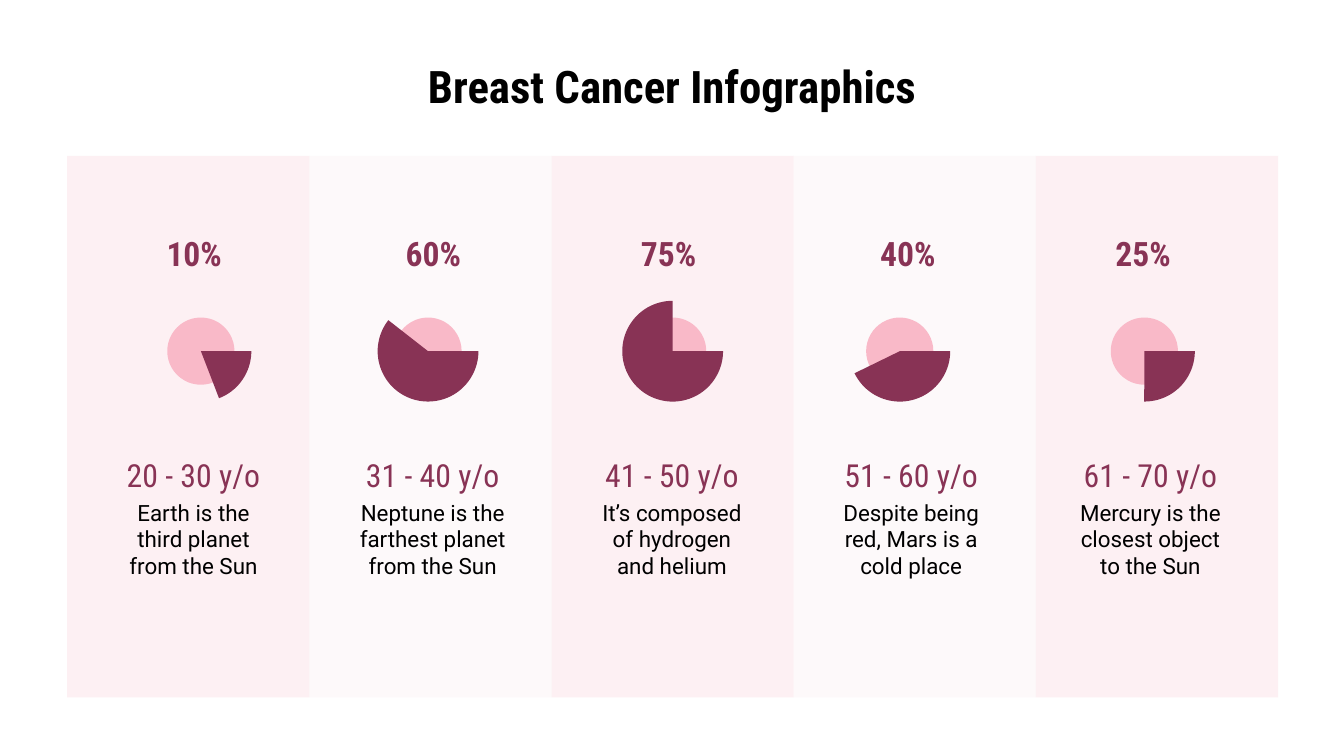
from lxml.etree import SubElement
from pptx import Presentation
from pptx.dml.color import RGBColor
from pptx.enum.shapes import MSO_SHAPE
from pptx.enum.text import MSO_ANCHOR, PP_ALIGN
from pptx.oxml.ns import qn
from pptx.util import Inches, Pt

GRID_COLUMNS, GRID_ROWS = 100, 56.25
CELL = Inches(10) / GRID_COLUMNS
PANEL_PITCH = 18.02
CAPTION_PITCH = 17.8
PINK, PALE, PLUM, BLACK = "F9B9C8", "F9EAEE", "883355", "000000"

AGE_GROUPS = [
    ("10%", 14.45, 14.95, 69, "20 - 30 y/o", "Earth is the third planet from the Sun"),
    ("60%", 32.25, 31.85, 218, "31 - 40 y/o", "Neptune is the farthest planet from the Sun"),
    ("75%", 49.75, 50.05, 270, "41 - 50 y/o", "It’s composed of hydrogen and helium"),
    ("40%", 67.55, 66.95, 154, "51 - 60 y/o", "Despite being red, Mars is a cold place"),
    ("25%", 85.05, 85.15, 90.29, "61 - 70 y/o", "Mercury is the closest object to the Sun"),
]


def cells(*counts):
    return [round(count * CELL) for count in counts]


def color(value):
    return RGBColor.from_string(value)


def add_figure(page, kind, left, top, width, height, fill, opacity=100):
    shape = page.shapes.add_shape(kind, *cells(left, top, width, height))
    shape.shadow.inherit = False
    shape.line.fill.background()
    shape.fill.solid()
    shape.fill.fore_color.rgb = color(fill)
    if opacity < 100:
        tint = shape.fill._xPr.find(".//" + qn("a:srgbClr"))
        SubElement(tint, qn("a:alpha"), val=str(opacity * 1000))
    return shape


def add_label(page, text, center, top, width, height, size, ink,
              font="Roboto Condensed", bold=False, anchor=MSO_ANCHOR.MIDDLE):
    box = page.shapes.add_textbox(*cells(center - width / 2, top, width, height))
    frame = box.text_frame
    frame.word_wrap = True
    frame.vertical_anchor = anchor
    frame.margin_left = frame.margin_right = Inches(0.1)
    frame.margin_top = frame.margin_bottom = Inches(0.1)
    para = frame.paragraphs[0]
    para.text = text
    para.alignment = PP_ALIGN.CENTER
    para.font.name = font
    para.font.size = Pt(size)
    para.font.bold = bold
    para.font.color.rgb = color(ink)


def add_panel(page, index):
    fill, opacity = (PALE, 28) if index % 2 else (PINK, 21)
    add_figure(page, MSO_SHAPE.RECTANGLE, 5 + index * PANEL_PITCH, 11.6,
               PANEL_PITCH, 40.3, fill, opacity)


def add_dial(page, center, angle):
    middle, disc, wedge = 26.13, 5, 7.5
    add_figure(page, MSO_SHAPE.OVAL, center - disc / 2, middle - disc / 2,
               disc, disc, PINK)
    pie = add_figure(page, MSO_SHAPE.PIE, center - wedge / 2, middle - wedge / 2,
                     wedge, wedge, PLUM)
    pie.adjustments[0] = 0
    pie.adjustments[1] = angle * 0.6


def add_age_group(page, index, group):
    share, share_center, dial_center, angle, ages, caption = group
    center = GRID_COLUMNS / 2 + (index - 2) * CAPTION_PITCH
    add_label(page, caption, center, 37.2, 13.8, 5.8, 12, BLACK, font="Roboto")
    add_label(page, ages, center, 33.8, 13.8, 3.1, 17, PLUM)
    add_dial(page, dial_center, angle)
    add_label(page, share, share_center, 17.3, 17.5, 3.1, 18, PLUM, bold=True)


def main():
    deck = Presentation()
    deck.slide_width, deck.slide_height = cells(GRID_COLUMNS, GRID_ROWS)
    page = deck.slides.add_slide(deck.slide_layouts[6])
    for index in range(len(AGE_GROUPS)):
        add_panel(page, index)
    add_label(page, "Breast Cancer Infographics", GRID_COLUMNS / 2, 3.4, 96.1, 6.3,
              24, BLACK, bold=True, anchor=MSO_ANCHOR.TOP)
    for index, group in enumerate(AGE_GROUPS):
        add_age_group(page, index, group)
    deck.save("out.pptx")


if __name__ == "__main__":
    main()
